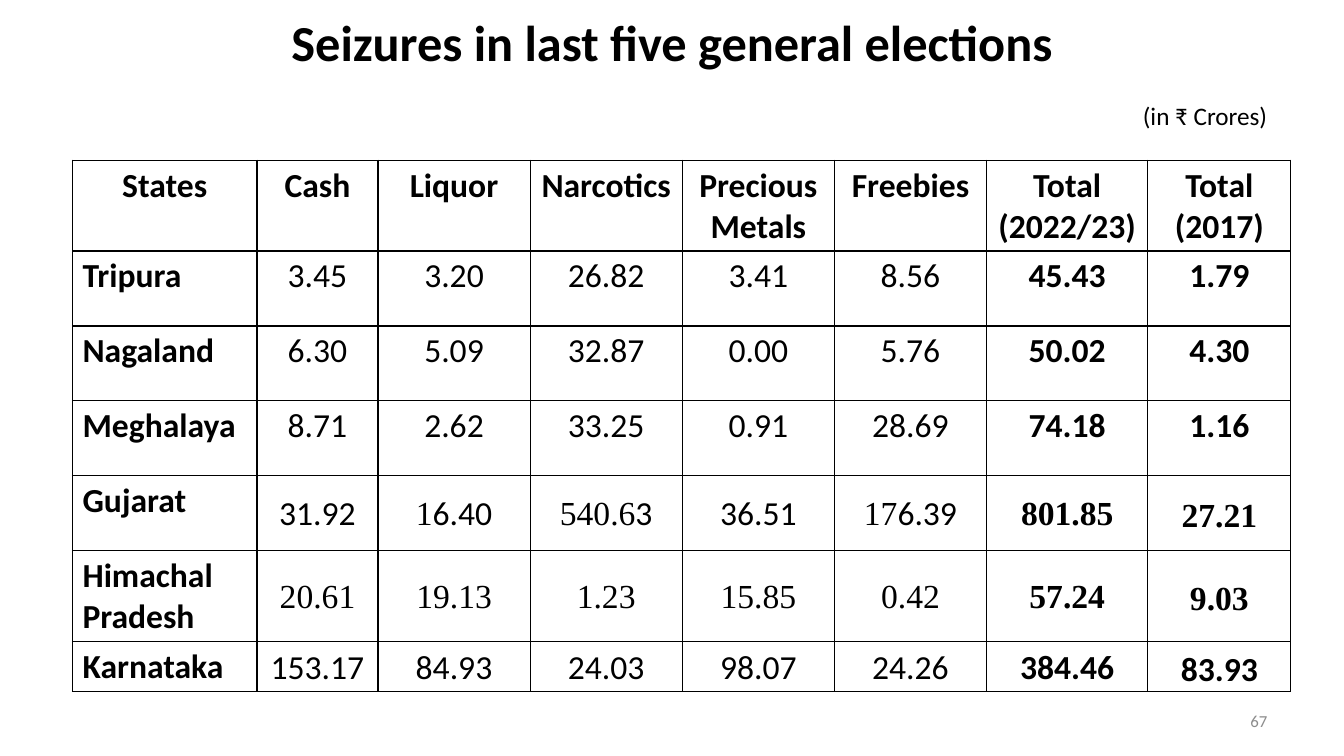
from lxml.etree import SubElement
from pptx import Presentation
from pptx.dml.color import RGBColor
from pptx.enum.text import MSO_ANCHOR, PP_ALIGN
from pptx.oxml.ns import qn
from pptx.util import Pt

BLACK, GREY = "000000", "8C8C8C"
SANS, SERIF = "Calibri", "Times New Roman"
COLUMN_WIDTHS = [131.8, 86.4, 108.7, 108.7, 108.7, 108.7, 115.2, 102.2]
ROW_HEIGHTS = [59, 53.5, 53.5, 53.5, 53.5, 59, 32.4]
HEADINGS = ["States", "Cash", "Liquor", "Narcotics", "Precious Metals",
            "Freebies", "Total (2022/23)", "Total (2017)"]
# Digits before a bar are set in the serif font.
SEIZURES = [
    ["Tripura", "3.45", "3.20", "26.82", "3.41", "8.56", "45.43", "1.79"],
    ["Nagaland", "6.30", "5.09", "32.87", "0.00", "5.76", "50.02", "4.30"],
    ["Meghalaya", "8.71", "2.62", "33.25", "0.91", "28.69", "74.18", "1.16"],
    ["Gujarat", "31.92", "1|6.40", "540.6|3", "36.51", "17|6.39", "801.85|", "27.21|"],
    ["Himachal Pradesh", "20.61|", "19.13|", "1.23|", "15.85|", "0.42|", "57.24|", "9.03|"],
    ["Karnataka", "153.17", "84.93", "24.03", "98.07", "24.26", "384.46", "83.93"],
]
FIRST_COMPACT_ROW = 4
FIRST_TOTAL_COLUMN = 6
LAST_COLUMN = len(HEADINGS) - 1


def apply_format(target, values):
    for name, value in values.items():
        setattr(target, name, value)


def rgb(colour):
    return RGBColor.from_string(colour)


def add_span(para, text, size, colour=BLACK, bold=False, font=SANS):
    span = para.add_run()
    span.text = text
    apply_format(span.font, {"name": font, "size": Pt(size), "bold": bold})
    span.font.color.rgb = rgb(colour)


def place(shape, left, top, width, height):
    apply_format(shape, {"left": Pt(left), "top": Pt(top),
                         "width": Pt(width), "height": Pt(height)})


def add_title(page, text):
    title = page.shapes.title
    place(title, 23, 4, 914.4, 65)
    apply_format(title.text_frame, {"vertical_anchor": MSO_ANCHOR.TOP, "word_wrap": True})
    para = title.text_frame.paragraphs[0]
    para.alignment = PP_ALIGN.CENTER
    add_span(para, text, 36, bold=True)


def add_label(page, text, bounds, size, colour, align, anchor):
    box = page.shapes.add_textbox(*map(Pt, bounds))
    apply_format(box.text_frame, {"word_wrap": True, "vertical_anchor": anchor})
    para = box.text_frame.paragraphs[0]
    para.alignment = align
    add_span(para, text, size, colour)


def add_borders(cell):
    properties = cell._tc.get_or_add_tcPr()
    for position, side in enumerate(("lnL", "lnR", "lnT", "lnB")):
        line = properties.makeelement(qn(f"a:{side}"), {"w": str(Pt(1))})
        properties.insert(position, line)
        fill = SubElement(line, qn("a:solidFill"))
        SubElement(fill, qn("a:srgbClr"), val=BLACK)


def fill_cell(cell, text, row, column):
    cell.fill.background()
    add_borders(cell)
    para = cell.text_frame.paragraphs[0]
    is_state = row > 0 and column == 0
    compact = row >= FIRST_COMPACT_ROW
    if is_state:
        para.alignment = PP_ALIGN.JUSTIFY if compact else PP_ALIGN.LEFT
    else:
        para.alignment = PP_ALIGN.CENTER
    if compact and not is_state:
        apply_format(cell, {"vertical_anchor": MSO_ANCHOR.MIDDLE,
                            "margin_left": Pt(5), "margin_right": Pt(5),
                            "margin_top": 0, "margin_bottom": 0})
        para.line_spacing = 1.15 if column == LAST_COLUMN else 1.07
    bold = row == 0 or column == 0 or column >= FIRST_TOTAL_COLUMN
    serif, _, plain = text.rpartition("|")
    for part, font in ((serif, SERIF), (plain, SANS)):
        if part:
            add_span(para, part, 24, bold=bold, font=font)


def add_seizure_table(page, rows):
    frame = page.shapes.add_table(len(rows), len(HEADINGS), Pt(51.8), Pt(114.5),
                                  Pt(sum(COLUMN_WIDTHS)), Pt(sum(ROW_HEIGHTS)))
    table = frame.table
    apply_format(table, {"first_row": False, "horz_banding": False})
    for column, width in zip(table.columns, COLUMN_WIDTHS):
        column.width = Pt(width)
    for row, height in zip(table.rows, ROW_HEIGHTS):
        row.height = Pt(height)
    for row, texts in enumerate(rows):
        for column, text in enumerate(texts):
            fill_cell(table.cell(row, column), text, row, column)


def main():
    deck = Presentation()
    apply_format(deck, {"slide_width": Pt(960), "slide_height": Pt(540)})
    page = deck.slides.add_slide(deck.slide_layouts.get_by_name("Title Only"))
    add_title(page, "Seizures in last five general elections")
    add_label(page, "67", (688.3, 500.4, 224, 28.8), 12, GREY,
              PP_ALIGN.RIGHT, MSO_ANCHOR.MIDDLE)
    add_label(page, "(in ₹ Crores)", (809.3, 68.4, 127.4, 28.8), 18, BLACK,
              PP_ALIGN.LEFT, MSO_ANCHOR.TOP)
    add_seizure_table(page, [HEADINGS] + SEIZURES)
    deck.save("out.pptx")


if __name__ == "__main__":
    main()
